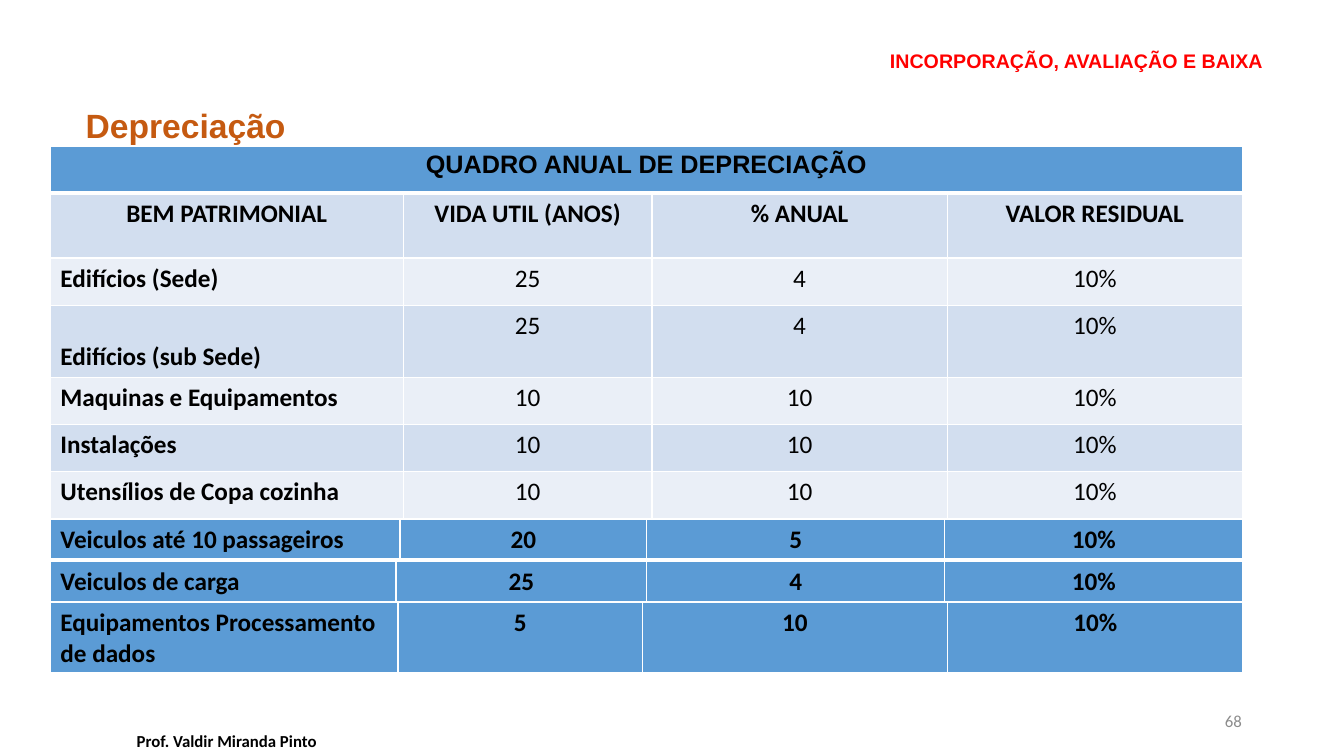
from dataclasses import dataclass

from lxml.etree import SubElement
from pptx import Presentation
from pptx.dml.color import RGBColor
from pptx.enum.text import MSO_ANCHOR, PP_ALIGN
from pptx.oxml.ns import qn
from pptx.util import Cm, Pt


@dataclass(frozen=True)
class Theme:
    black: str = "000000"
    red: str = "FF0000"
    orange: str = "C55A11"
    grey: str = "8C8C8C"
    blue: str = "5B9BD5"
    band_dark: str = "D2DEEF"
    band_light: str = "EAEFF7"
    border: str = "FFFFFF"
    heading: int = 24
    table: int = 18
    title: int = 14
    small: int = 12
    thin: int = 1
    thick: int = 3


THEME = Theme()
LEFT, CENTER, RIGHT = PP_ALIGN.LEFT, PP_ALIGN.CENTER, PP_ALIGN.RIGHT
TABLE_LEFT = 1.27
ROW_HEIGHT = 1.19

DEPRECIATION_ROWS = [
    ("BEM PATRIMONIAL", "VIDA UTIL (ANOS)", "% ANUAL", "VALOR RESIDUAL"),
    ("Edifícios (Sede)", "25", "4", "10%"),
    ("Edifícios (sub Sede)", "25", "4", "10%"),
    ("Maquinas e Equipamentos", "10", "10", "10%"),
    ("Instalações", "10", "10", "10%"),
    ("Utensílios de Copa cozinha", "10", "10", "10%"),
]
# top, height, column widths, texts
EXTRA_ROWS = [
    (13.08, 1.04, (8.81, 6.22, 7.51, 7.51),
     ("Veiculos até 10 passageiros", "20", "5", "10%")),
    (14.15, 1.04, (8.71, 6.32, 7.51, 7.51),
     ("Veiculos de carga", "25", "4", "10%")),
    (15.19, 1.78, (8.76, 6.16, 7.69, 7.44),
     ("Equipamentos Processamento de dados", "5", "10", "10%")),
]


def write(tf, text, *, size, color=THEME.black, font="Calibri", bold=True,
          align=LEFT, spacing=None):
    p = tf.paragraphs[0]
    p.alignment = align
    p.line_spacing = spacing
    r = p.add_run()
    r.text = text
    r.font.name = font
    r.font.size = Pt(size)
    r.font.bold = bold
    r.font.color.rgb = RGBColor.from_string(color)


def add_text(s, text, left, top, width, height, anchor=MSO_ANCHOR.MIDDLE, **style):
    tf = s.shapes.add_textbox(Cm(left), Cm(top), Cm(width), Cm(height)).text_frame
    tf.word_wrap = True
    tf.vertical_anchor = anchor
    write(tf, text, **style)


def set_borders(cell, bottom):
    """Draw the four cell borders; only the bottom width varies."""
    tc_pr = cell._tc.get_or_add_tcPr()
    widths = {"a:lnL": THEME.thin, "a:lnR": THEME.thin,
              "a:lnT": THEME.thin, "a:lnB": bottom}
    for tag, width in widths.items():
        line = SubElement(tc_pr, qn(tag), w=str(Pt(width)))
        fill = SubElement(line, qn("a:solidFill"))
        SubElement(fill, qn("a:srgbClr"), val=THEME.border)


def fill_cell(cell, text, fill, bottom=THEME.thin, **style):
    set_borders(cell, bottom)
    cell.fill.solid()
    cell.fill.fore_color.rgb = RGBColor.from_string(fill)
    write(cell.text_frame, text, size=THEME.table, **style)


def add_table(s, top, widths, heights):
    frame = s.shapes.add_table(len(heights), len(widths), Cm(TABLE_LEFT), Cm(top),
                               Cm(sum(widths)), Cm(sum(heights)))
    table = frame.table
    table.first_row = table.horz_banding = False
    for column, width in zip(table.columns, widths):
        column.width = Cm(width)
    for row, height in zip(table.rows, heights):
        row.height = Cm(height)
    return table


def add_depreciation_table(s):
    heights = [ROW_HEIGHT, 1.63, ROW_HEIGHT, 1.82] + [ROW_HEIGHT] * 3
    table = add_table(s, 3.68, (8.89, 6.27, 7.44, 7.44), heights)
    table.cell(0, 0).merge(table.cell(0, 3))
    fill_cell(table.cell(0, 0), "QUADRO ANUAL DE DEPRECIAÇÃO", THEME.blue,
              bottom=THEME.thick, font="Arial", align=CENTER)
    for i, texts in enumerate(DEPRECIATION_ROWS, start=1):
        fill = THEME.band_dark if i % 2 else THEME.band_light
        for j, text in enumerate(texts):
            fill_cell(table.cell(i, j), text, fill, bold=i == 1 or j == 0,
                      align=CENTER if i == 1 or j else LEFT)
    table.cell(3, 0).vertical_anchor = MSO_ANCHOR.BOTTOM


def add_extra_row(s, top, height, widths, texts):
    table = add_table(s, top, widths, [height])
    for j, text in enumerate(texts):
        fill_cell(table.cell(0, j), text, THEME.blue, bottom=THEME.thick,
                  align=CENTER if j else LEFT)


def main():
    prs = Presentation()
    prs.slide_width, prs.slide_height = Cm(33.87), Cm(19.05)
    s = prs.slides.add_slide(prs.slide_layouts[6])

    add_text(s, "INCORPORAÇÃO, AVALIAÇÃO E BAIXA", 2.46, 1.07, 29.62, 0.97,
             size=THEME.title, color=THEME.red, font="Arial", align=RIGHT, spacing=0.9)
    add_text(s, "Depreciação", 1.91, 2.64, 29.62, 1.24, anchor=MSO_ANCHOR.TOP,
             size=THEME.heading, color=THEME.orange, font="Arial", spacing=0.9)
    add_text(s, "Prof. Valdir Miranda Pinto", 0, 18.34, 11.43, 0.66,
             size=THEME.small, align=CENTER)
    add_text(s, "68", 23.93, 17.65, 7.62, 1.02,
             size=THEME.small, color=THEME.grey, bold=False, align=RIGHT)

    add_depreciation_table(s)
    for extra_row in EXTRA_ROWS:
        add_extra_row(s, *extra_row)

    prs.save("out.pptx")


if __name__ == "__main__":
    main()
